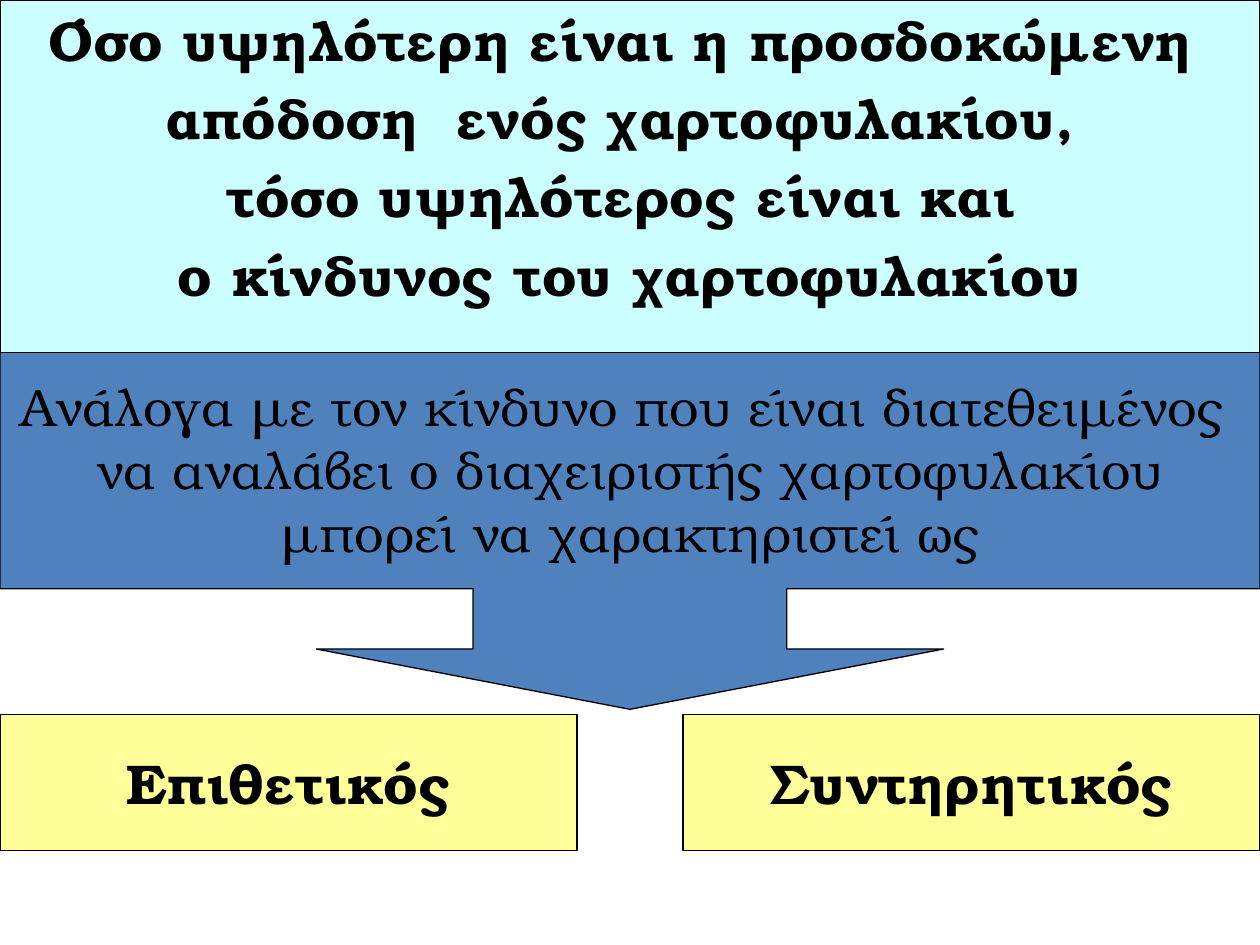
from pptx import Presentation
from pptx.dml.color import RGBColor
from pptx.enum.shapes import MSO_SHAPE
from pptx.enum.text import MSO_ANCHOR, PP_ALIGN
from pptx.util import Inches, Pt

COLORS = {
    "text": "000000",
    "line": "000000",
    "principle": "CCFFFF",
    "callout": "4F81BD",
    "manager": "FFFF99",
}
FONT = "TeX Gyre Bonum"
SLIDE_W, SLIDE_H = 10, 7.5


def rgb(name):
    return RGBColor.from_string(COLORS[name])


class SlideBuilder:
    def __init__(self, slide):
        self.slide = slide

    def shape(self, kind, left, top, width, height, fill):
        sp = self.slide.shapes.add_shape(
            kind, Inches(left), Inches(top), Inches(width), Inches(height))
        sp.shadow.inherit = False
        sp.fill.solid()
        sp.fill.fore_color.rgb = rgb(fill)
        sp.line.color.rgb = rgb("line")
        sp.line.width = Pt(0.75)
        return sp

    def text(self, sp, lines, size, bold=False, gap=0):
        """Write centred lines, one paragraph each, with gap points between them."""
        tf = sp.text_frame
        tf.word_wrap = False
        tf.vertical_anchor = MSO_ANCHOR.MIDDLE
        for i, line in enumerate(lines):
            p = tf.add_paragraph() if i else tf.paragraphs[0]
            p.alignment = PP_ALIGN.CENTER
            p.space_before = Pt(gap if i else 0)
            r = p.add_run()
            r.text = line
            r.font.name = FONT
            r.font.size = Pt(size)
            r.font.bold = bold
            r.font.color.rgb = rgb("text")
        return tf

    def box(self, left, top, width, height, fill, lines, gap=0):
        sp = self.shape(MSO_SHAPE.RECTANGLE, left, top, width, height, fill)
        return self.text(sp, lines, 32, bold=True, gap=gap)

    def arrow_callout(self, left, top, width, height, adjustments, lines):
        sp = self.shape(MSO_SHAPE.UP_DOWN_ARROW_CALLOUT,
                        left, top, width, height, "callout")
        for i, value in enumerate(adjustments):
            sp.adjustments[i] = value
        return self.text(sp, lines, 30)


def main():
    prs = Presentation()
    prs.slide_width, prs.slide_height = Inches(SLIDE_W), Inches(SLIDE_H)
    s = SlideBuilder(prs.slides.add_slide(prs.slide_layouts[6]))

    s.arrow_callout(0, 1.8, SLIDE_W, 3.83, (0.65, 0.65, 0.125, 0.5), [
        "Ανάλογα με τον κίνδυνο που είναι διατεθειμένος ",
        "να αναλάβει ο διαχειριστής χαρτοφυλακίου",
        "μπορεί να χαρακτηριστεί ως",
    ])

    # The principle sits at the top of its box, above the callout's edge.
    tf = s.box(0, 0, SLIDE_W, 2.8, "principle", [
        "Όσο υψηλότερη είναι η προσδοκώμενη ",
        "απόδοση  ενός χαρτοφυλακίου, ",
        "τόσο υψηλότερος είναι και ",
        "ο κίνδυνος του χαρτοφυλακίου",
    ], gap=6.4)
    tf.vertical_anchor = MSO_ANCHOR.TOP
    tf.margin_top = Inches(0.04)

    manager_w = 4.58
    for left, label in ((0, "Επιθετικός"), (SLIDE_W - manager_w, "Συντηρητικός")):
        s.box(left, 5.67, manager_w, 1.08, "manager", [label])

    prs.save("out.pptx")


if __name__ == "__main__":
    main()
